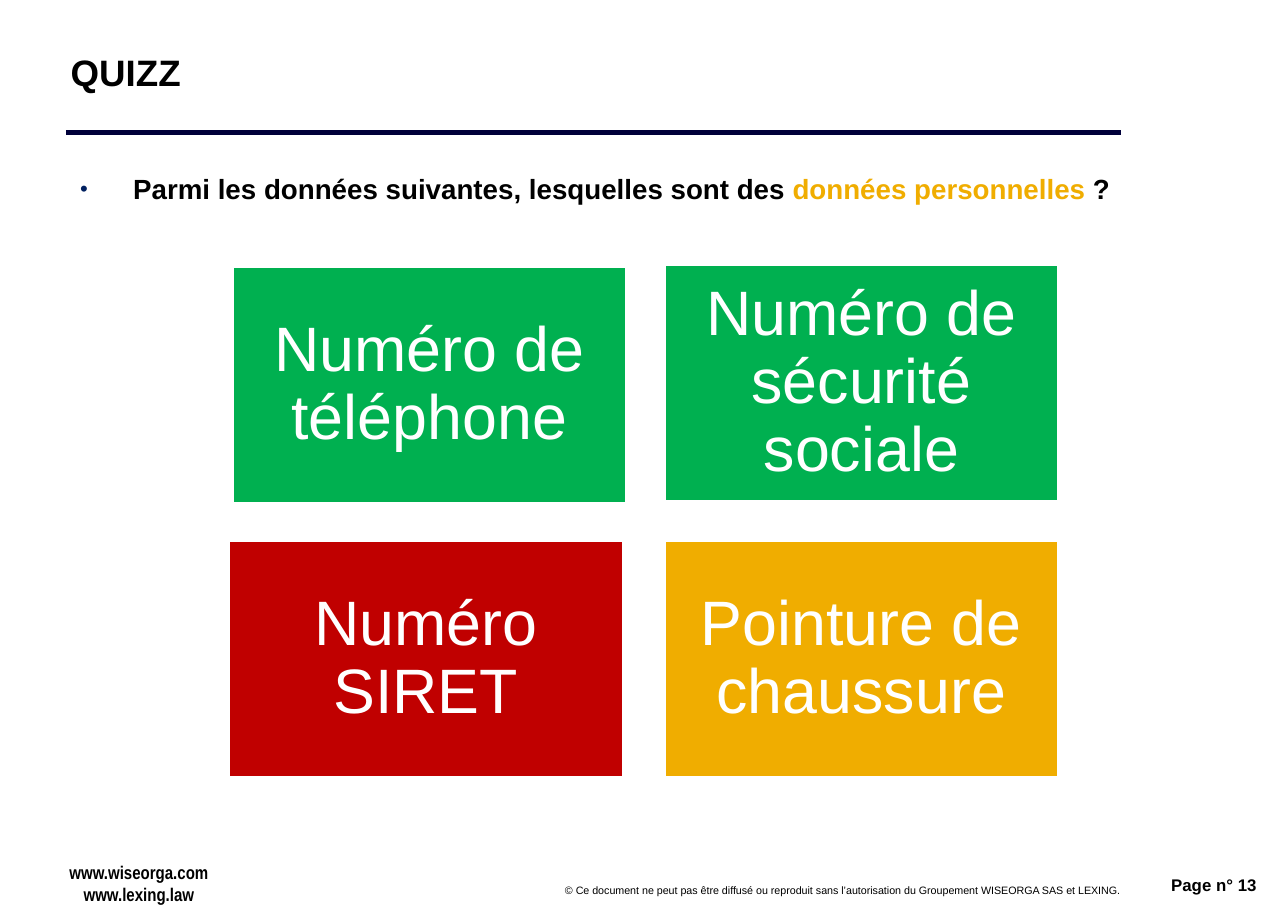
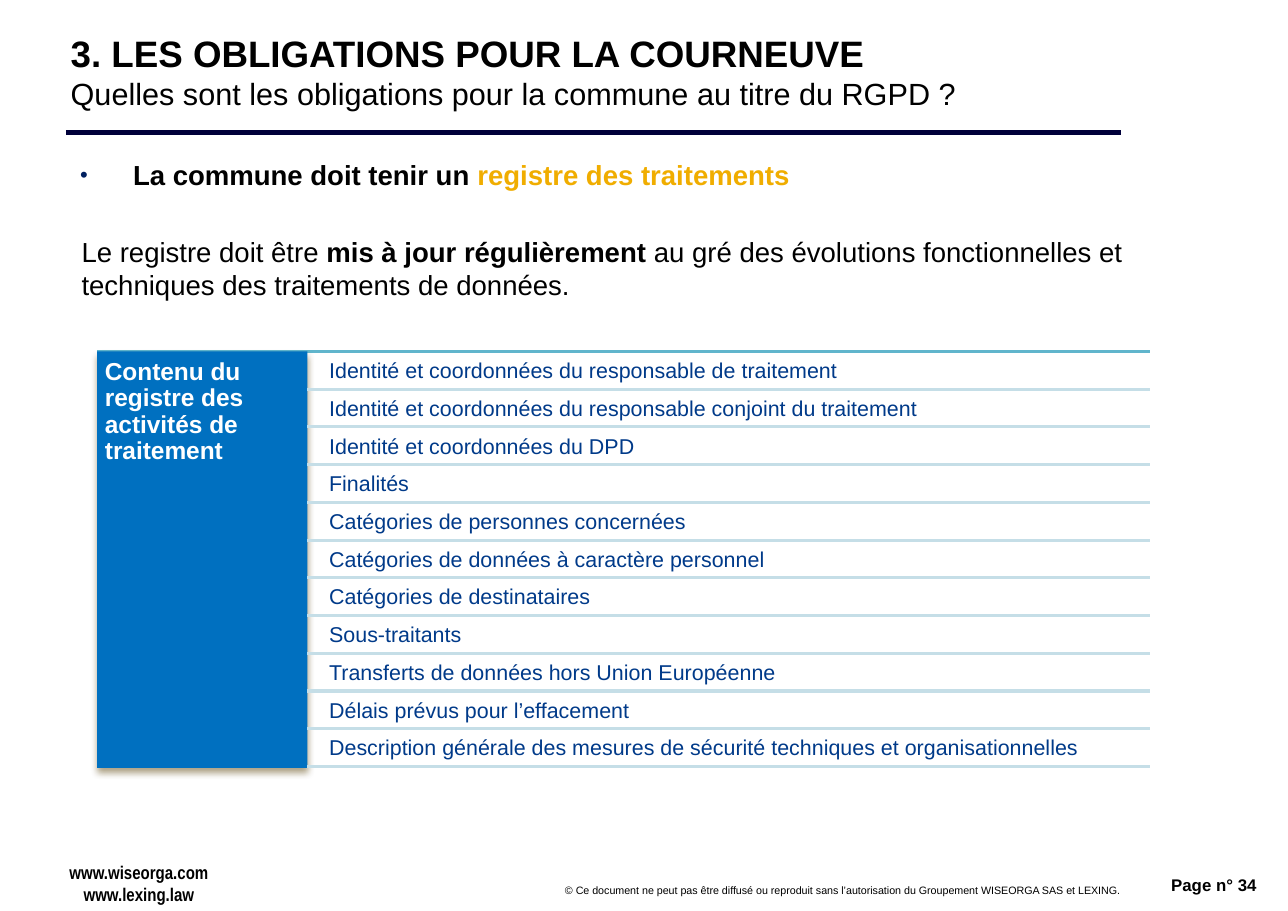
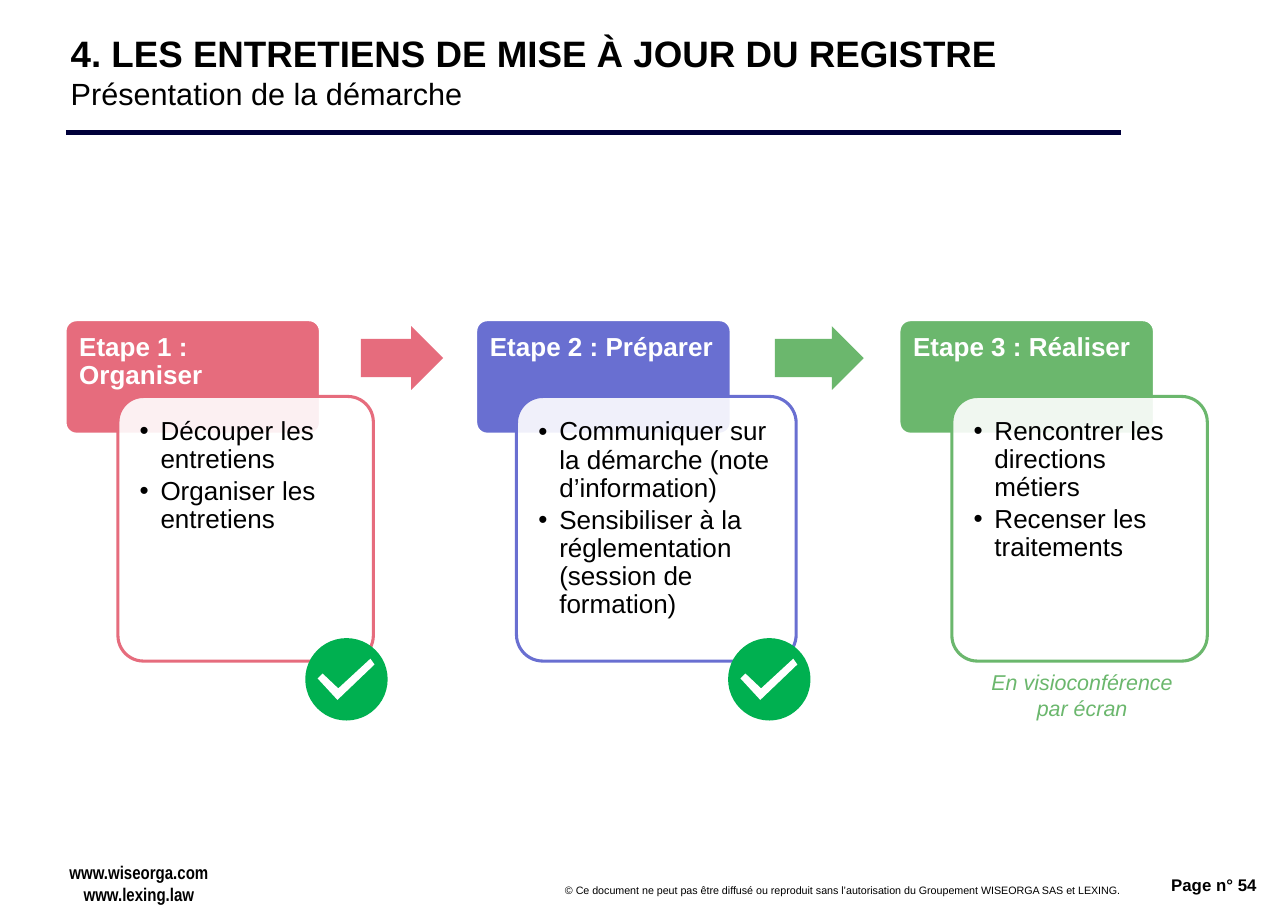
from pptx import Presentation
from pptx.dml.color import RGBColor
from pptx.enum.shapes import MSO_CONNECTOR, MSO_SHAPE
from pptx.enum.text import MSO_ANCHOR, MSO_AUTO_SIZE, PP_ALIGN
from pptx.oxml.ns import qn
from pptx.util import Cm, Pt
from lxml import etree

LEFT, CENTER, RIGHT = PP_ALIGN.LEFT, PP_ALIGN.CENTER, PP_ALIGN.RIGHT
TOP, MIDDLE = MSO_ANCHOR.TOP, MSO_ANCHOR.MIDDLE
RECTANGLE, ROUNDED = MSO_SHAPE.RECTANGLE, MSO_SHAPE.ROUNDED_RECTANGLE
OVAL, ARROW = MSO_SHAPE.OVAL, MSO_SHAPE.RIGHT_ARROW
STRAIGHT = MSO_CONNECTOR.STRAIGHT

BLACK = RGBColor(0x00, 0x00, 0x00)
WHITE = RGBColor(0xFF, 0xFF, 0xFF)
NAVY = RGBColor(0x00, 0x00, 0x3A)
BULLET_BLUE = RGBColor(0x00, 0x20, 0x60)
AMBER = RGBColor(0xF0, 0xAD, 0x00)
GREEN = RGBColor(0x00, 0xB0, 0x50)
RED = RGBColor(0xC0, 0x00, 0x00)
PANEL_BLUE = RGBColor(0x00, 0x70, 0xC0)
ROW_TEXT_BLUE = RGBColor(0x00, 0x3A, 0x89)
TEAL = RGBColor(0x60, 0xB5, 0xCC)
PALE_TEAL = RGBColor(0xC5, 0xDE, 0xE7)
SHADOW_BROWN = RGBColor(0x54, 0x3D, 0x00)
PINK = RGBColor(0xE6, 0x6C, 0x7D)
VIOLET = RGBColor(0x69, 0x6F, 0xD1)
LEAF = RGBColor(0x6B, 0xB7, 0x6D)

FONT = "Arial"
COPYRIGHT = ("© Ce document ne peut pas être diffusé ou reproduit sans "
             "l’autorisation du Groupement WISEORGA SAS et LEXING.")
SITES = "www.wiseorga.com\nwww.lexing.law"

QUIZ_TILES = [  # text, colour, left, top
    ("Numéro de téléphone", GREEN, 0.08, 0.05),
    ("Numéro de sécurité sociale", GREEN, 10.04, 0),
    ("Numéro SIRET", RED, 0, 6.37),
    ("Pointure de chaussure", AMBER, 10.04, 6.37),
]
REGISTER_ROWS = [
    "Identité et coordonnées du responsable de traitement",
    "Identité et coordonnées du responsable conjoint du traitement",
    "Identité et coordonnées du DPD",
    "Finalités",
    "Catégories de personnes concernées",
    "Catégories de données à caractère personnel",
    "Catégories de destinataires",
    "Sous-traitants",
    "Transferts de données hors Union Européenne",
    "Délais prévus pour l’effacement",
    "Description générale des mesures de sécurité techniques et organisationnelles",
]
STEPS = [  # heading, tasks, colour, left, detail offset, detail width, done
    ("Etape 1 : Organiser",
     ["Découper les entretiens", "Organiser les entretiens"],
     PINK, 1.5, 1.22, 5.89, True),
    ("Etape 2 : Préparer",
     ["Communiquer sur la démarche (note d’information)",
      "Sensibiliser à la réglementation (session de formation)"],
     VIOLET, 10.97, 0.94, 6.45, True),
    ("Etape 3 : Réaliser",
     ["Rencontrer les directions métiers", "Recenser les traitements"],
     LEAF, 20.73, 1.22, 5.89, False),
]
HEADING_WIDTH, HEADING_HEIGHT = 5.89, 2.64
DETAIL_DROP, DETAIL_HEIGHT = 1.77, 6.1
TICK = [(0.79, 0.25), (0.4, 0.61), (0.21, 0.43), (0.15, 0.49), (0.39, 0.75), (0.84, 0.32)]


def to_cm(box):
    return [Cm(length) for length in box]


def move(shape, box):
    shape.left, shape.top, shape.width, shape.height = to_cm(box)


def set_frame(frame, margins, anchor=TOP):
    frame.margin_left, frame.margin_top, frame.margin_right, frame.margin_bottom = to_cm(margins)
    frame.vertical_anchor = anchor
    frame.word_wrap = True
    frame.auto_size = MSO_AUTO_SIZE.NONE


def format_font(font, size, color, bold=False, italic=False, name=FONT):
    font.name, font.size, font.bold, font.italic = name, Pt(size), bold, italic
    font.color.rgb = color


def write(frame, text, size, color, align=LEFT, spacing=None, **style):
    frame.text = text
    for paragraph in frame.paragraphs:
        paragraph.alignment = align
        paragraph.line_spacing = spacing
        for run in paragraph.runs:
            format_font(run.font, size, color, **style)


def write_mixed(paragraph, pieces, size=18):
    """Fill a paragraph from (text, bold, colour) pieces."""
    for text, bold, color in pieces:
        run = paragraph.add_run()
        run.text = text
        format_font(run.font, size, color, bold)


def set_indent(paragraph, margin, first_line=0):
    properties = paragraph._p.get_or_add_pPr()
    properties.set("marL", str(int(Cm(margin))))
    properties.set("indent", str(int(Cm(first_line))))
    return properties


def add_bullet(paragraph, margin, color, percent=100):
    properties = set_indent(paragraph, *margin)
    bullet_color = etree.SubElement(properties, qn("a:buClr"))
    etree.SubElement(bullet_color, qn("a:srgbClr"), val=str(color))
    etree.SubElement(properties, qn("a:buSzPct"), val=str(percent * 1000))
    etree.SubElement(properties, qn("a:buFont"), typeface=FONT)
    etree.SubElement(properties, qn("a:buChar"), char="•")


def add_text(slide, box, text, size, color, margins=(0.25, 0.13, 0.25, 0.13), **style):
    frame = slide.shapes.add_textbox(*to_cm(box)).text_frame
    set_frame(frame, margins)
    write(frame, text, size, color, **style)
    return frame


def add_block(slide, kind, box, fill, line=None, adjustments=()):
    shape = slide.shapes.add_shape(kind, *to_cm(box))
    shape.shadow.inherit = False
    for index, value in enumerate(adjustments):
        shape.adjustments[index] = value
    paint(shape, fill, line)
    return shape


def paint(shape, fill, line=None):
    shape.fill.solid()
    shape.fill.fore_color.rgb = fill
    if line is None:
        shape.line.fill.background()
    else:
        shape.line.color.rgb = line
        shape.line.width = Pt(2)


def add_rule(slide, left, right, top, color, width):
    rule = slide.shapes.add_connector(STRAIGHT, *to_cm((left, top, right, top)))
    rule.line.color.rgb = color
    rule.line.width = Pt(width)
    etree.SubElement(rule._element.spPr, qn("a:effectLst"))


def add_drop_shadow(shape):
    effects = shape._element.spPr.find(qn("a:effectLst"))
    shadow = etree.SubElement(effects, qn("a:outerShdw"), blurRad=str(int(Pt(4.5))),
                              dist=str(int(Pt(3))), dir="5400000", rotWithShape="0")
    color = etree.SubElement(shadow, qn("a:srgbClr"), val=str(SHADOW_BROWN))
    etree.SubElement(color, qn("a:alpha"), val="48000")


def set_opacity(shape, percent):
    color = shape._element.spPr.find(qn("a:solidFill")).find(qn("a:srgbClr"))
    etree.SubElement(color, qn("a:alpha"), val=str(percent * 1000))


def style_master(presentation):
    """Set the title style and text fitting that every slide inherits."""
    master = presentation.slide_master
    title, body = master.placeholders[0], master.placeholders[1]
    move(title, (1.48, 0.45, 24.36, 2.39))
    set_frame(title.text_frame, (0.15, 0.15, 0.15, 0.15), MIDDLE)
    set_frame(body.text_frame, (0.25, 0.13, 0.25, 0.13))
    level = master._element.find(f".//{qn('p:titleStyle')}/{qn('a:lvl1pPr')}")
    level.set("algn", "l")
    defaults = level.find(qn("a:defRPr"))
    defaults.set("sz", "2400")
    defaults.set("b", "1")
    defaults.find(qn("a:latin")).set("typeface", FONT)


def add_page(presentation, layout_index, number, title, subtitle=None):
    slide = presentation.slides.add_slide(presentation.slide_layouts[layout_index])
    paragraph = slide.shapes.title.text_frame.paragraphs[0]
    paragraph.text = f"{title}\v{subtitle}" if subtitle else title
    format_font(paragraph.runs[0].font, 24, BLACK, bold=True)
    for run in paragraph.runs[1:]:
        format_font(run.font, 20, BLACK)
    add_rule(slide, 1.52, 25.86, 3.05, NAVY, 3)
    footer_margins = (0.28, 0.15, 0.28, 0.15)
    add_text(slide, (9.7, 20.22, 16.41, 0.58), COPYRIGHT, 7, BLACK,
             margins=footer_margins, align=RIGHT)
    add_text(slide, (26.16, 20.03, 3.07, 0.86), f"Page n° {number}", 11, BLACK,
             align=RIGHT, bold=True)
    sites = add_text(slide, (1.17, 19.71, 3.94, 1.32), SITES, 12, BLACK,
                     margins=footer_margins, align=CENTER, bold=True, name="Arial Narrow")
    sites.word_wrap = False
    for paragraph in sites.paragraphs:
        set_indent(paragraph, 0.13)
    return slide


def fill_body(slide, box, pieces, size=18):
    """Place the body and write its bulleted lead sentence."""
    body = slide.placeholders[1]
    move(body, box)
    lead = body.text_frame.paragraphs[0]
    add_bullet(lead, (1.32, -1.22), BULLET_BLUE, 80)
    lead.space_before = Pt(0)
    write_mixed(lead, pieces, size)
    return body.text_frame


def add_quiz_tiles(slide, left, top):
    for text, color, across, down in QUIZ_TILES:
        tile = add_block(slide, RECTANGLE, (left + across, top + down, 9.09, 5.46), color, WHITE)
        set_frame(tile.text_frame, (0.43, 0.43, 0.43, 0.43), MIDDLE)
        write(tile.text_frame, text, 41, WHITE, align=CENTER, spacing=0.9)


def add_register(slide, left, top, width):
    panel_width, row_height = 4.85, 0.87
    right, rows_left = left + width, left + panel_width
    add_rule(slide, left, right, top, TEAL, 2)
    panel = add_block(slide, RECTANGLE, (left, top, panel_width, 9.6), PANEL_BLUE)
    add_drop_shadow(panel)
    set_frame(panel.text_frame, (0.18, 0.18, 0.18, 0.18))
    write(panel.text_frame, "Contenu du registre des activités de traitement", 16, WHITE,
          spacing=0.9, bold=True)
    for index, text in enumerate(REGISTER_ROWS):
        row_top = top + index * row_height
        add_text(slide, (rows_left + 0.35, row_top + 0.05, right - rows_left - 0.35, 0.84),
                 text, 14, ROW_TEXT_BLUE, margins=(0.15, 0.15, 0.15, 0.15), spacing=0.9)
        add_rule(slide, rows_left, right, row_top + row_height, PALE_TEAL, 2)


def add_step(slide, left, top, heading, tasks, color, offset, width):
    card = add_block(slide, ROUNDED, (left, top, HEADING_WIDTH, HEADING_HEIGHT),
                     color, WHITE, [0.1])
    set_frame(card.text_frame, (0.25, 0.25, 0.25, 0.18))
    write(card.text_frame, heading, 17, WHITE, spacing=0.9, bold=True)
    detail = add_block(slide, ROUNDED, (left + offset, top + DETAIL_DROP, width, DETAIL_HEIGHT),
                       WHITE, color, [0.1])
    set_opacity(detail, 90)
    set_frame(detail.text_frame, (0.33, 0.33, 0.33, 0.33))
    write(detail.text_frame, "\n".join(tasks), 17, BLACK, spacing=0.9)
    for paragraph in detail.text_frame.paragraphs:
        add_bullet(paragraph, (0.48, -0.48), BLACK)
        paragraph.space_after = Pt(2.5)


def add_step_arrow(slide, left, top, gap, color):
    """Draw an arrow in the gap between two step headings."""
    box = (left + 0.26 * gap, top + 0.15, 0.53 * gap, 1.47)
    add_block(slide, ARROW, box, color, adjustments=[0.6, 0.5])


def add_done_badge(slide, left, top, size=1.9):
    add_block(slide, OVAL, (left, top, size, size), GREEN)
    points = [to_cm((left + x * size, top + y * size)) for x, y in TICK]
    builder = slide.shapes.build_freeform(*points[0])
    builder.add_line_segments(points[1:], close=True)
    tick = builder.convert_to_shape()
    tick.shadow.inherit = False
    paint(tick, WHITE)


def add_process(slide, top):
    for heading, tasks, color, left, offset, width, done in STEPS:
        add_step(slide, left, top, heading, tasks, color, offset, width)
        detail_left, bottom = left + offset, top + DETAIL_DROP + DETAIL_HEIGHT
        if done:
            add_done_badge(slide, detail_left + width - 1.57, bottom - 0.53)
        else:
            add_text(slide, (detail_left + 0.3, bottom + 0.05, 5.41, 1.45),
                     "En visioconférence par écran", 14, color, align=CENTER, italic=True)
    lefts = [step[3] for step in STEPS]
    for left, following, color in zip(lefts, lefts[1:], (PINK, LEAF)):
        start = left + HEADING_WIDTH
        add_step_arrow(slide, start, top, following - start, color)


def build_quiz(presentation):
    slide = add_page(presentation, 1, 13, "QUIZZ")
    fill_body(slide, (1.5, 3.84, 25.63, 1.17), [
        ("Parmi les données suivantes, lesquelles sont des ", True, BLACK),
        ("données personnelles", True, AMBER),
        (" ?", True, BLACK)], 18.1)
    add_quiz_tiles(slide, 5.28, 6.1)


def build_obligations(presentation):
    slide = add_page(presentation, 1, 34, "3. LES OBLIGATIONS POUR LA COURNEUVE",
                     "Quelles sont les obligations pour la commune au titre du RGPD ?")
    frame = fill_body(slide, (1.5, 3.51, 25.76, 3.8), [
        ("La commune doit tenir un ", True, BLACK),
        ("registre des traitements", True, AMBER)])
    update = frame.add_paragraph()
    etree.SubElement(set_indent(update, 0.13), qn("a:buNone"))
    update.space_before = Pt(29)
    write_mixed(update, [
        ("Le registre doit être ", False, BLACK),
        ("mis à jour régulièrement ", True, BLACK),
        ("au gré des évolutions fonctionnelles et techniques des traitements de données.",
         False, BLACK)])
    add_register(slide, 2.24, 8.1, 24.28)


def build_interviews(presentation):
    slide = add_page(presentation, 5, 54, "4. LES ENTRETIENS DE MISE À JOUR DU REGISTRE",
                     "Présentation de la démarche")
    add_process(slide, 7.37)


def main():
    presentation = Presentation()
    presentation.slide_width, presentation.slide_height = Cm(29.7), Cm(21)
    style_master(presentation)
    build_quiz(presentation)
    build_obligations(presentation)
    build_interviews(presentation)
    presentation.save("out.pptx")


if __name__ == "__main__":
    main()
